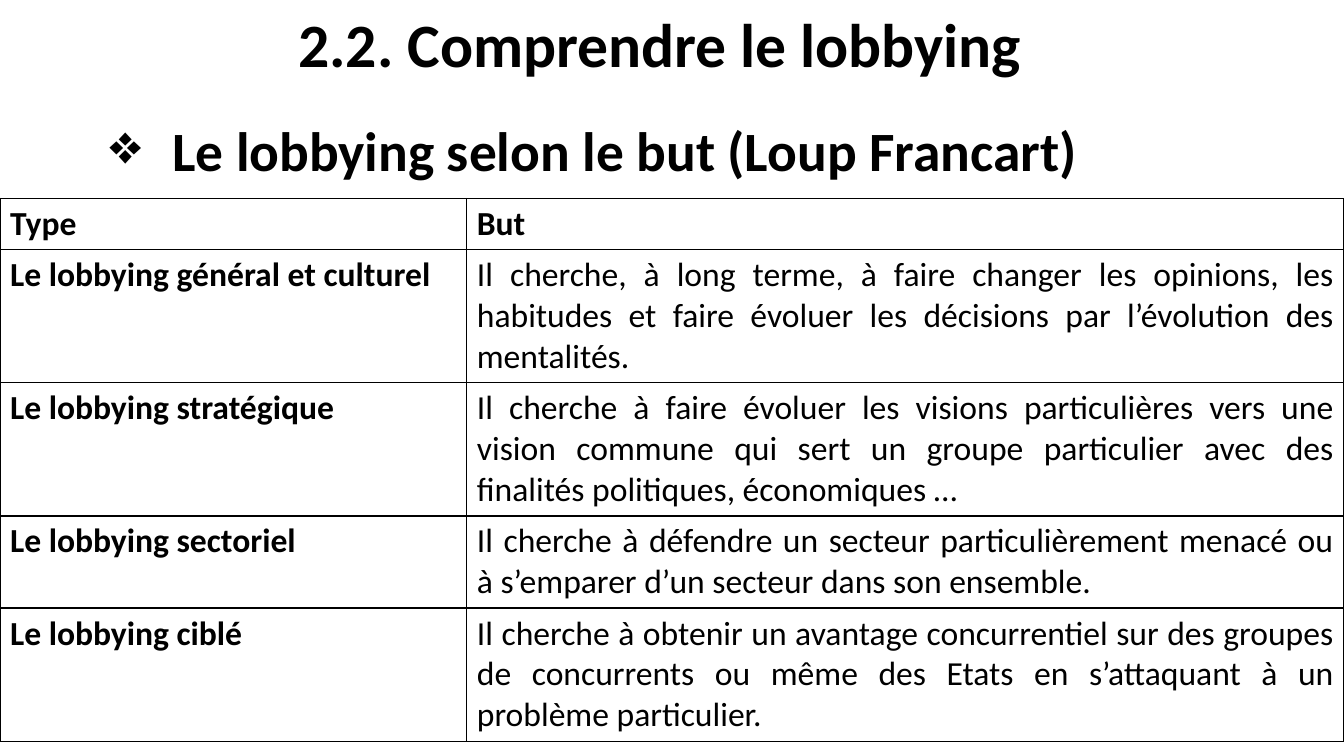
from dataclasses import dataclass

from lxml import etree
from pptx import Presentation
from pptx.dml.color import RGBColor
from pptx.enum.text import MSO_ANCHOR, PP_ALIGN
from pptx.oxml.ns import qn
from pptx.util import Inches, Pt

LEFT, CENTER, JUSTIFY = PP_ALIGN.LEFT, PP_ALIGN.CENTER, PP_ALIGN.JUSTIFY
MIDDLE = MSO_ANCHOR.MIDDLE


@dataclass(frozen=True)
class Theme:
    font: str = "Calibri"
    ink: str = "000000"
    paper: str = "FFFFFF"
    title_size: float = 44
    subtitle_size: float = 39.6
    table_size: float = 24
    border_width: float = 1


THEME = Theme()
HANGING = 0.62
TABLE_TOP = 1.97
COLUMN_WIDTHS = (4.63, 8.7)
LINE_HEIGHT = 0.407
CELL_PADDING = 0.1

# Type, goal, number of text lines in the row
LOBBYING_TYPES = [
    ("Type", "But", 1),
    ("Le lobbying général et culturel ",
     "Il cherche, à long terme, à faire changer les opinions, les habitudes et "
     "faire évoluer les décisions par l’évolution des mentalités. ", 3),
    ("Le lobbying stratégique",
     "Il cherche à faire évoluer les visions particulières vers une vision "
     "commune qui sert un groupe particulier avec des finalités politiques, "
     "économiques … ", 3),
    ("Le lobbying sectoriel",
     "Il cherche à défendre un secteur particulièrement menacé ou à s’emparer "
     "d’un secteur dans son ensemble. ", 2),
    ("Le lobbying ciblé ",
     "Il cherche à obtenir un avantage concurrentiel sur des groupes de "
     "concurrents ou même des Etats en s’attaquant à un problème particulier.", 3),
]


def write_text(text_frame, text, size, bold=True, align=LEFT, line_spacing=None):
    paragraph = text_frame.paragraphs[0]
    paragraph.alignment = align
    if line_spacing:
        paragraph.line_spacing = line_spacing
    run = paragraph.add_run()
    run.text = text
    run.font.name = THEME.font
    run.font.size = Pt(size)
    run.font.bold = bold
    run.font.color.rgb = RGBColor.from_string(THEME.ink)
    return paragraph


def set_hanging_indent(paragraph, bullet=None):
    properties = paragraph._p.get_or_add_pPr()
    properties.set("marL", str(Inches(HANGING)))
    properties.set("indent", str(-Inches(HANGING)))
    if bullet:
        etree.SubElement(properties, qn("a:buChar")).set("char", bullet)


def add_heading(slide, text, left, top, width, height, bullet=None, **text_format):
    shape = slide.shapes.add_textbox(
        Inches(left), Inches(top), Inches(width), Inches(height))
    text_frame = shape.text_frame
    text_frame.word_wrap = True
    text_frame.vertical_anchor = MIDDLE
    paragraph = write_text(text_frame, text, line_spacing=0.9, **text_format)
    set_hanging_indent(paragraph, bullet)


def set_borders(cell):
    properties = cell._tc.get_or_add_tcPr()
    for position, side in enumerate(("a:lnL", "a:lnR", "a:lnT", "a:lnB")):
        line = etree.Element(qn(side), w=str(Pt(THEME.border_width)))
        fill = etree.SubElement(line, qn("a:solidFill"))
        etree.SubElement(fill, qn("a:srgbClr")).set("val", THEME.ink)
        properties.insert(position, line)


def add_lobbying_table(slide):
    heights = [lines * LINE_HEIGHT + CELL_PADDING for *_, lines in LOBBYING_TYPES]
    table = slide.shapes.add_table(
        len(LOBBYING_TYPES), len(COLUMN_WIDTHS), Inches(0), Inches(TABLE_TOP),
        Inches(sum(COLUMN_WIDTHS)), Inches(sum(heights))).table
    for column, width in zip(table.columns, COLUMN_WIDTHS):
        column.width = Inches(width)
    for row_index, (kind, goal, _) in enumerate(LOBBYING_TYPES):
        table.rows[row_index].height = Inches(heights[row_index])
        for column_index, text in enumerate((kind, goal)):
            cell = table.cell(row_index, column_index)
            cell.fill.solid()
            cell.fill.fore_color.rgb = RGBColor.from_string(THEME.paper)
            set_borders(cell)
            write_text(cell.text_frame, text, THEME.table_size, align=JUSTIFY,
                       bold=row_index == 0 or column_index == 0)


def main():
    presentation = Presentation()
    presentation.slide_width = Inches(13.33)
    presentation.slide_height = Inches(7.5)
    slide = presentation.slides.add_slide(presentation.slide_layouts[6])

    # Headings
    add_heading(slide, "2.2. Comprendre le lobbying", 0.8, 0.02, 11.5, 0.9,
                size=THEME.title_size, align=CENTER)
    add_heading(slide, "Le lobbying selon le but (Loup Francart)",
                0.99, 1.19, 11.5, 0.67, bullet="❖", size=THEME.subtitle_size)

    # Types of lobbying and their goals
    add_lobbying_table(slide)

    presentation.save("out.pptx")


if __name__ == "__main__":
    main()
